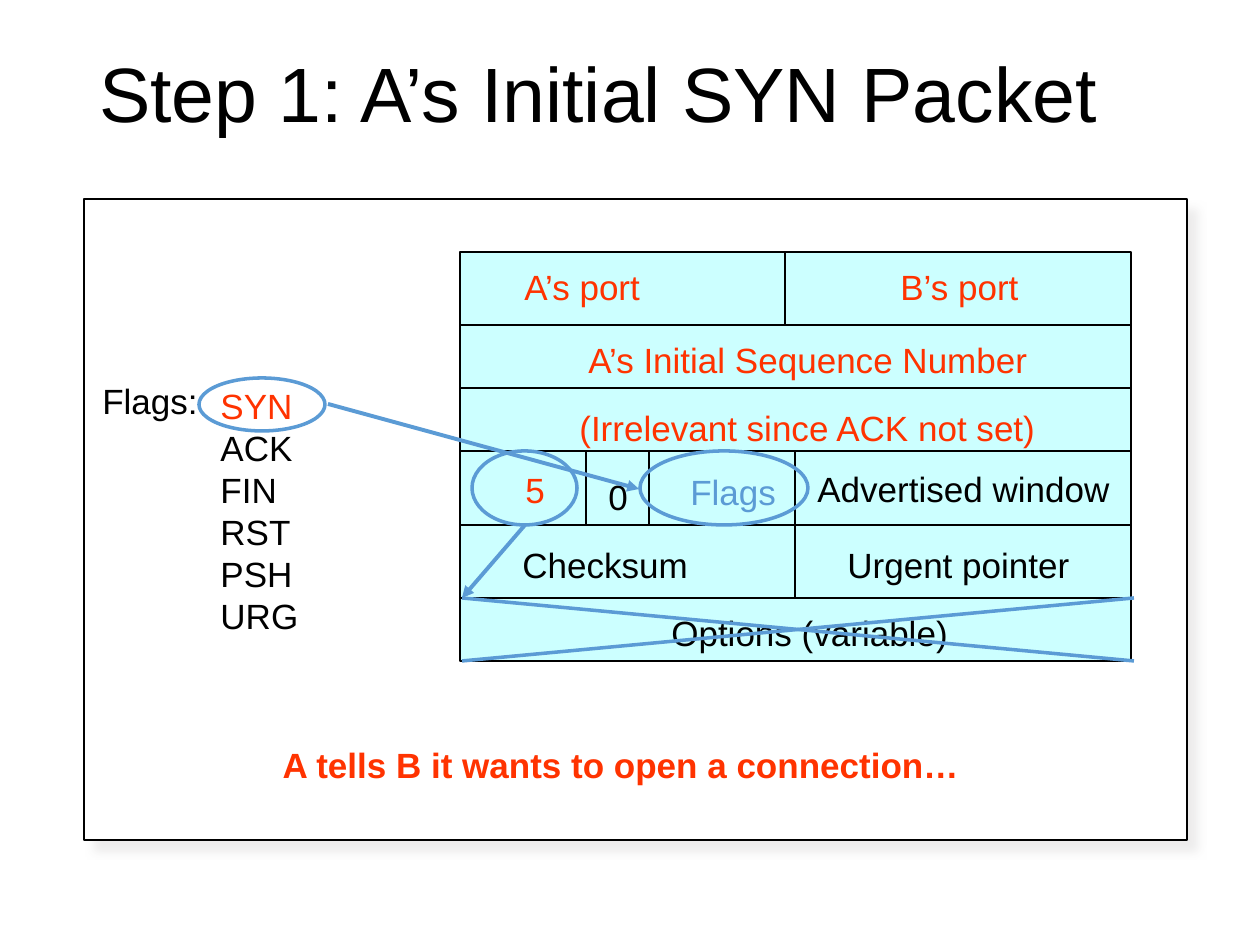
"""Build the slide showing the TCP header of A's initial SYN packet."""
from lxml import etree
from pptx import Presentation
from pptx import util as u
from pptx.dml.color import RGBColor
from pptx.enum import shapes, text
from pptx.oxml import ns

PX = 914400 // 126
COLORS = {"ink": "000000", "paper": "FFFFFF", "cell": "CCFFFF",
          "set": "FF3300", "mark": "5B9BD5", "shadow": "E7E6E6"}
FONT = "Arial"

TITLE = "Step 1: A’s Initial SYN Packet"
CAPTION = "A tells B it wants to open a connection…"
FLAGS = ["SYN", "ACK", "FIN", "RST", "PSH", "URG"]
LEFT, RIGHT, TOP, MIDDLE = 460, 1131, 252, 795
LABEL_HEIGHT = 54

ROWS = [
    {"height": 73, "splits": [785], "labels": [
        ("A’s port", "set", 512, 7, 150), ("B’s port", "set", 888, 7, 150)]},
    {"height": 63, "splits": [], "labels": [
        ("A’s Initial Sequence Number", "set", 576, 7, 480)]},
    {"height": 63, "splits": [], "labels": [
        ("(Irrelevant since ACK not set)", "set", 567, 12, 490)]},
    {"height": 74, "splits": [586, 649, MIDDLE], "labels": [
        ("5", "set", 513, 11, 50), ("0", "ink", 596, 18, 49),
        ("Flags", "mark", 678, 13, 115),
        ("Advertised window", "ink", 805, 10, 323)]},
    {"height": 73, "splits": [MIDDLE], "labels": [
        ("Checksum", "ink", 510, 12, 200),
        ("Urgent pointer", "ink", 835, 12, 255)]},
    {"height": 63, "splits": [], "labels": [
        ("Options (variable)", "ink", 659, 7, 315)]},
]
RINGS = [(640, 451, 168, 74), (199, 378, 126, 53), (472, 451, 105, 74)]
ARROWS = [(328, 404, 639, 489), (525, 525, 462, 598)]
CROSS = [(462, 598, 1134, 661), (462, 661, 1134, 598)]


def color(name):
    return RGBColor.from_string(COLORS[name])


def px(*lengths):
    return [length * PX for length in lengths]


def add_outline(slide, kind, box, fill, line, width):
    outline = slide.shapes.add_shape(kind, *px(*box))
    outline.shadow.inherit = False
    if fill:
        outline.fill.solid()
        outline.fill.fore_color.rgb = color(fill)
    else:
        outline.fill.background()
    outline.line.color.rgb = color(line)
    outline.line.width = u.Pt(width)
    return outline


def add_text(slide, wording, box, ink, size=20, bold=False, wrap=False,
             align=text.PP_ALIGN.LEFT, fill=None):
    label = slide.shapes.add_textbox(*px(*box))
    if fill:
        label.fill.solid()
        label.fill.fore_color.rgb = color(fill)
    frame = label.text_frame
    frame.word_wrap = wrap
    frame.text = wording
    for paragraph in frame.paragraphs:
        paragraph.alignment = align
        for run in paragraph.runs:
            run.font.name = FONT
            run.font.size = u.Pt(size)
            run.font.bold = bold
            run.font.color.rgb = color(ink)
    return frame


def add_line(slide, ends, width, arrow=False):
    stroke = slide.shapes.add_connector(shapes.MSO_CONNECTOR.STRAIGHT, *px(*ends))
    stroke.line.color.rgb = color("mark")
    stroke.line.width = u.Pt(width)
    properties = stroke._element.spPr
    if arrow:
        etree.SubElement(properties.find(ns.qn("a:ln")), ns.qn("a:tailEnd"), type="triangle")
    etree.SubElement(properties, ns.qn("a:effectLst"))


def add_panel(slide):
    panel = add_outline(slide, shapes.MSO_SHAPE.RECTANGLE,
                        (84, 199, 1103, 641), "paper", "ink", 0.75)
    effects = panel._element.spPr.find(ns.qn("a:effectLst"))
    shadow = etree.SubElement(effects, ns.qn("a:outerShdw"), blurRad=str(u.Pt(5)),
                              dist=str(u.Pt(8.5)), dir="2700000", algn="tl", rotWithShape="0")
    tint = etree.SubElement(shadow, ns.qn("a:srgbClr"), val=COLORS["shadow"])
    etree.SubElement(tint, ns.qn("a:alpha"), val="75000")


def add_header(slide):
    top = TOP
    for row in ROWS:
        edges = [LEFT, *row["splits"], RIGHT]
        for start, end in zip(edges, edges[1:]):
            add_outline(slide, shapes.MSO_SHAPE.RECTANGLE,
                        (start, top, end - start, row["height"]), "cell", "ink", 0.75)
        for wording, ink, left, drop, width in row["labels"]:
            add_text(slide, wording, (left, top + drop, width, LABEL_HEIGHT), ink, fill="cell")
        top += row["height"]


def main():
    deck = Presentation()
    deck.slide_width, deck.slide_height = px(1260, 945)
    slide = deck.slides.add_slide(deck.slide_layouts[6])

    title = add_text(slide, TITLE, (87, 50, 1086, 183), "ink", size=44, wrap=True)
    title.paragraphs[0].line_spacing = 0.9
    add_panel(slide)
    add_header(slide)

    add_text(slide, "Flags:", (90, 373, 125, LABEL_HEIGHT), "ink")
    flags = add_text(slide, "\n".join(FLAGS), (208, 378, 110, 265), "ink")
    for paragraph in flags.paragraphs:
        paragraph.line_spacing = u.Pt(24)
    flags.paragraphs[0].runs[0].font.color.rgb = color("set")
    add_text(slide, CAPTION, (265, 737, 712, LABEL_HEIGHT), "set", bold=True,
             align=text.PP_ALIGN.CENTER)

    for ring in RINGS:
        add_outline(slide, shapes.MSO_SHAPE.OVAL, ring, None, "mark", 2)
    for ends in ARROWS:
        add_line(slide, ends, 2.25, arrow=True)
    for ends in CROSS:
        add_line(slide, ends, 2)
    deck.save("out.pptx")


if __name__ == "__main__":
    main()
